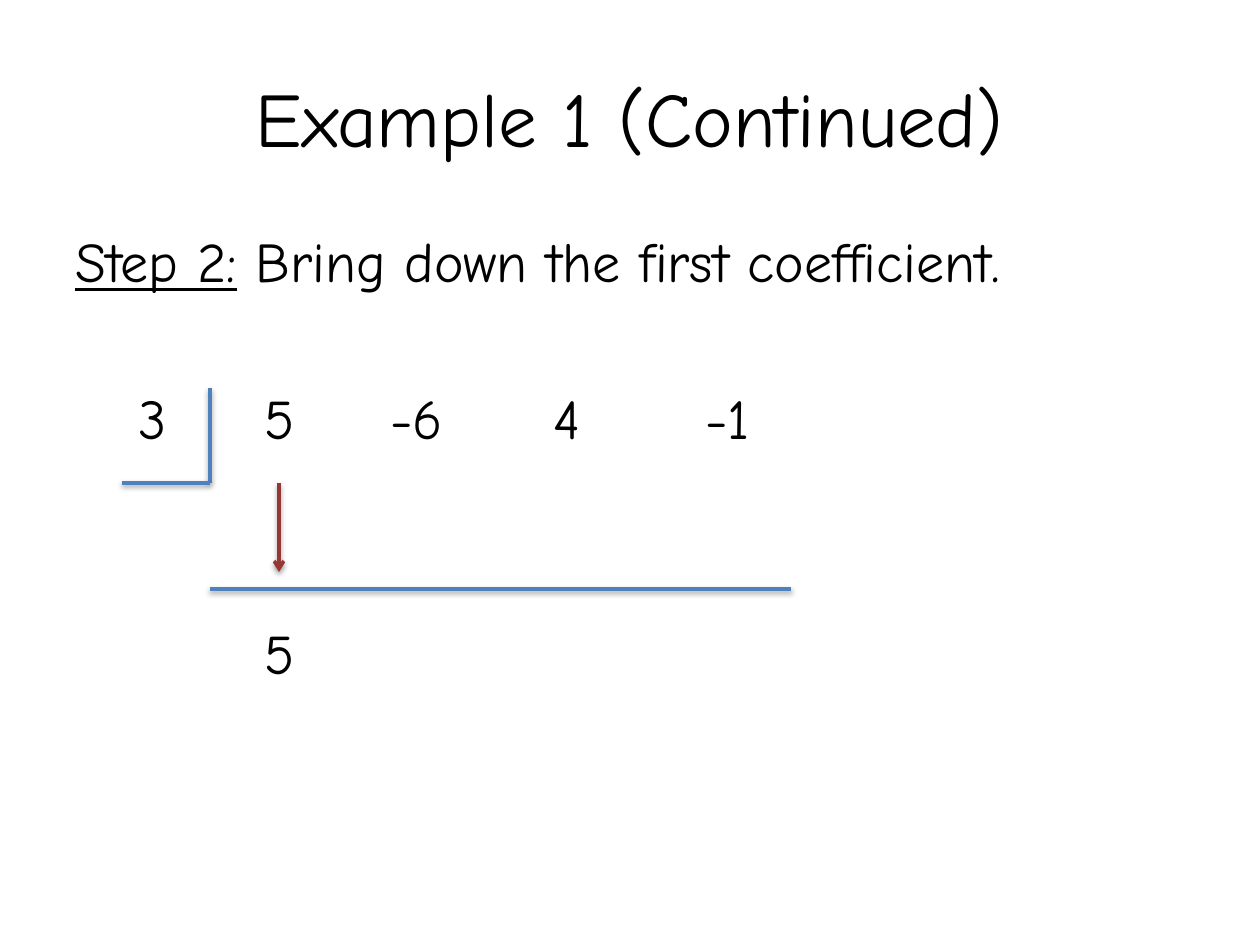
from dataclasses import dataclass

from lxml import etree
from pptx import Presentation
from pptx.dml.color import RGBColor
from pptx.enum.shapes import MSO_CONNECTOR
from pptx.enum.text import MSO_ANCHOR, PP_ALIGN
from pptx.oxml.ns import qn
from pptx.util import Emu, Pt

STRAIGHT = MSO_CONNECTOR.STRAIGHT
MIDDLE, TOP = MSO_ANCHOR.MIDDLE, MSO_ANCHOR.TOP
CENTER, LEFT = PP_ALIGN.CENTER, PP_ALIGN.LEFT
EMU_PER_PX = 914400 / 126


@dataclass(frozen=True)
class Theme:
    font: str = "Comic Neue"
    ink: RGBColor = RGBColor(0x00, 0x00, 0x00)
    rule: RGBColor = RGBColor(0x4F, 0x81, 0xBD)
    arrow: RGBColor = RGBColor(0x95, 0x37, 0x35)
    title_size: int = 44
    body_size: int = 32
    line_width: int = 2


THEME = Theme()
COLUMN_STOPS = (63, 189, 315, 478, 630)
MARGIN, CONTENT_WIDTH, ROW_HEIGHT = 63, 1134, 80
BRACKET_LEFT, BRACKET_RIGHT, BRACKET_TOP, BRACKET_BOTTOM = 122, 210, 388, 483


def px(length):
    return Emu(round(length * EMU_PER_PX))


def add_text(page, top, height, parts, size, align=LEFT, anchor=TOP):
    box = page.shapes.add_textbox(px(MARGIN), px(top), px(CONTENT_WIDTH), px(height))
    frame = box.text_frame
    frame.word_wrap = True
    frame.vertical_anchor = anchor
    para = frame.paragraphs[0]
    para.alignment = align
    for text, underlined in parts:
        span = para.add_run()
        span.text = text
        span.font.name = THEME.font
        span.font.size = Pt(size)
        span.font.color.rgb = THEME.ink
        span.font.underline = underlined
    return para


def add_number_row(page, top, numbers, first_column=0):
    text = "".join(f"\t{number}" for number in numbers)
    para = add_text(page, top, ROW_HEIGHT, [(text, False)], THEME.body_size)
    stops = etree.SubElement(para._p.get_or_add_pPr(), qn("a:tabLst"))
    for stop in COLUMN_STOPS[first_column:first_column + len(numbers)]:
        etree.SubElement(stops, qn("a:tab"), pos=str(px(stop)), algn="l")


def add_shadow(line):
    effects = etree.SubElement(line._element.spPr, qn("a:effectLst"))
    shadow = etree.SubElement(
        effects, qn("a:outerShdw"), blurRad=str(Pt(3.1)), dist=str(Pt(1.6)),
        dir="5400000", rotWithShape="0",
    )
    color = etree.SubElement(shadow, qn("a:srgbClr"), val="000000")
    etree.SubElement(color, qn("a:alpha"), val="38000")


def add_line(shapes, start, end, color, arrow=False):
    line = shapes.add_connector(STRAIGHT, *map(px, start + end))
    line.line.color.rgb = color
    line.line.width = Pt(THEME.line_width)
    if arrow:
        etree.SubElement(line.line._get_or_add_ln(), qn("a:tailEnd"), type="arrow")
    add_shadow(line)


def add_divisor_bracket(page):
    bracket = page.shapes.add_group_shape()
    corner = (BRACKET_RIGHT, BRACKET_BOTTOM)
    add_line(bracket.shapes, (BRACKET_RIGHT, BRACKET_TOP), corner, THEME.rule)
    add_line(bracket.shapes, corner, (BRACKET_LEFT, BRACKET_BOTTOM), THEME.rule)


def main():
    deck = Presentation()
    deck.slide_width, deck.slide_height = px(1260), px(945)
    page = deck.slides.add_slide(deck.slide_layouts[6])

    add_text(page, 38, 157, [("Example 1 (Continued)", False)],
             THEME.title_size, CENTER, MIDDLE)
    add_text(page, 220, ROW_HEIGHT,
             [("Step 2:", True), (" Bring down the first coefficient.", False)],
             THEME.body_size)
    add_number_row(page, 377, ("3", "5", "-6", "4", "-1"))
    add_number_row(page, 612, ("5",), first_column=1)

    add_divisor_bracket(page)
    add_line(page.shapes, (BRACKET_RIGHT, 589), (791, 589), THEME.rule)
    add_line(page.shapes, (279, BRACKET_BOTTOM), (279, 572), THEME.arrow, arrow=True)

    deck.save("out.pptx")


if __name__ == "__main__":
    main()
